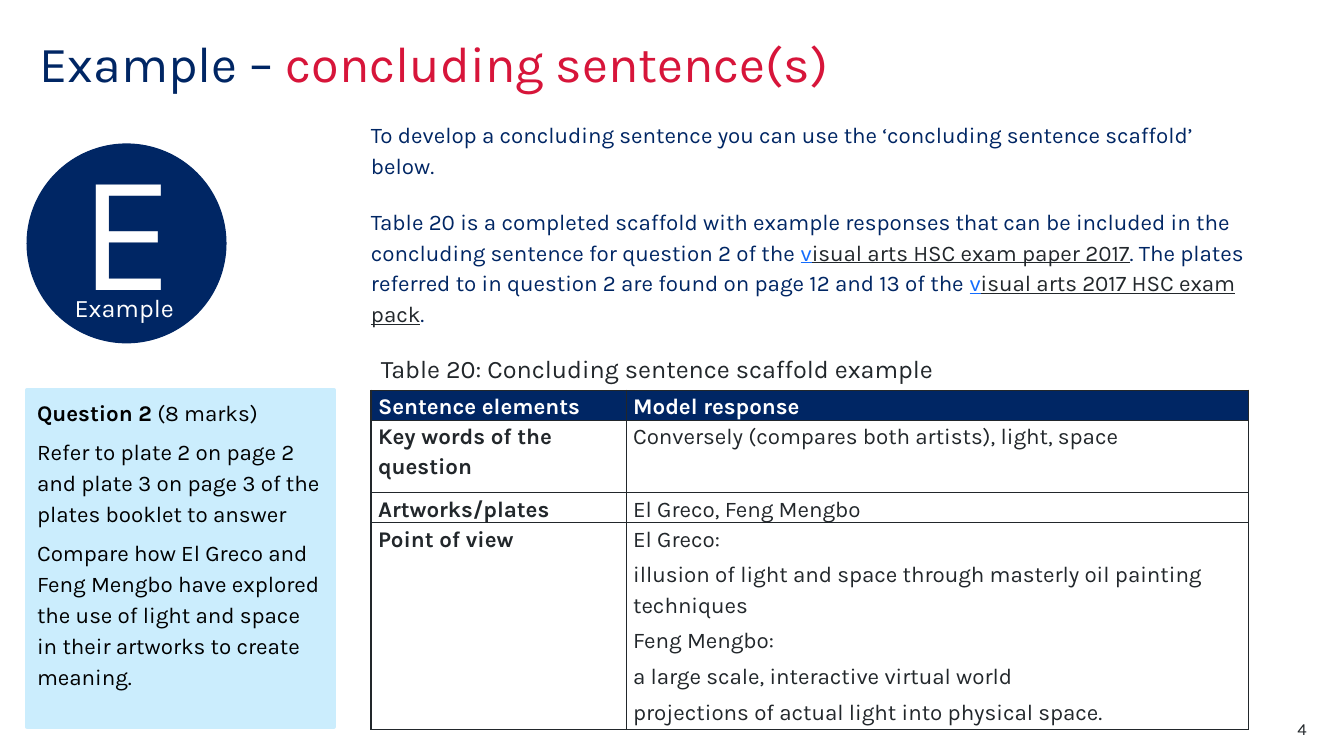
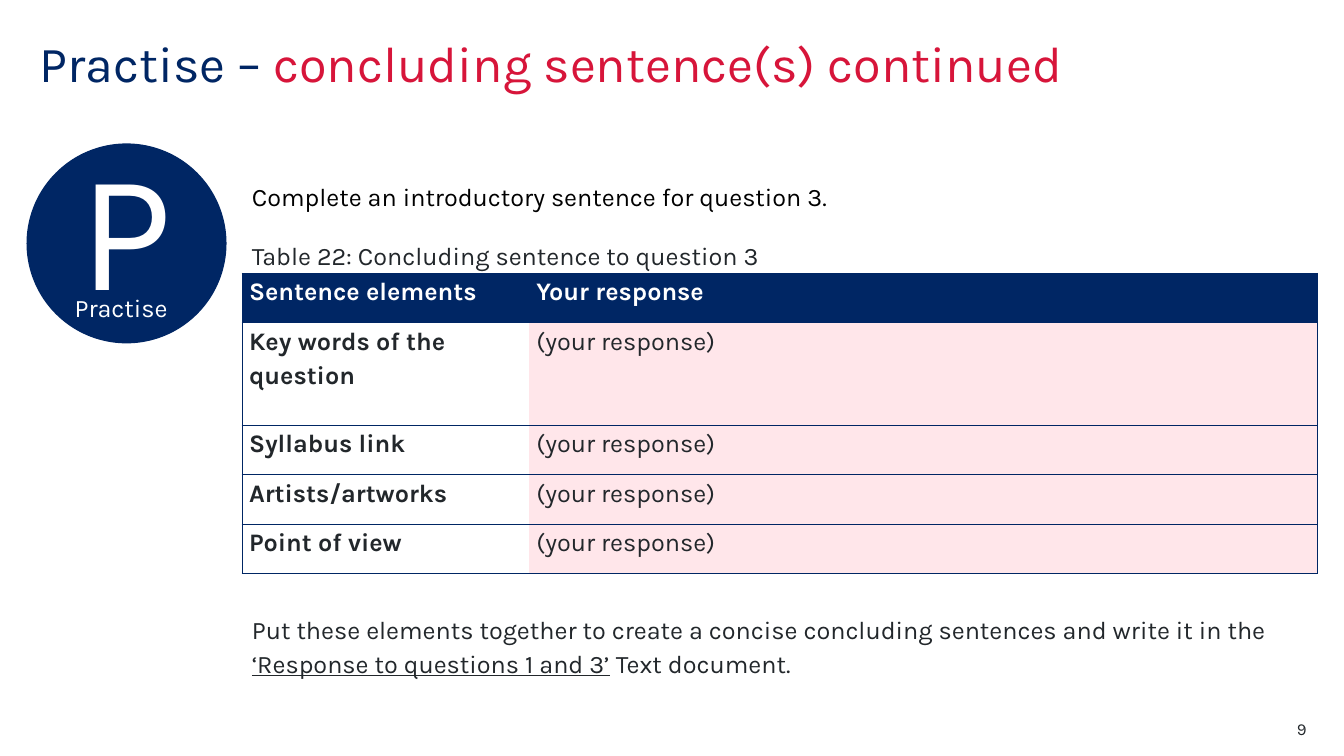
from lxml import etree
from pptx import Presentation
from pptx.dml.color import RGBColor
from pptx.enum.shapes import MSO_SHAPE
from pptx.enum.text import MSO_ANCHOR, MSO_AUTO_SIZE, PP_ALIGN
from pptx.oxml.ns import qn
from pptx.util import Inches, Pt

OVAL, RECT = MSO_SHAPE.OVAL, MSO_SHAPE.RECTANGLE
TOP, MIDDLE = MSO_ANCHOR.TOP, MSO_ANCHOR.MIDDLE
LEFT, CENTER, RIGHT = PP_ALIGN.LEFT, PP_ALIGN.CENTER, PP_ALIGN.RIGHT
NO_FIT = MSO_AUTO_SIZE.NONE

FONT = "Karla"
NAVY, RED, BLUE, SKY, PINK = "002664", "D7153A", "146CFD", "CBEDFD", "FFE6EA"
INK, BLACK, WHITE = "22272B", "000000", "FFFFFF"
TITLE_ONLY = 5


def rgb(value):
    return RGBColor.from_string(value)


def style_paragraph(p, size, color, bold=False, align=LEFT, line=None, before=0, after=0):
    p.alignment = align
    p.space_before, p.space_after = Pt(before), Pt(after)
    if line:
        p.line_spacing = line
    font = p.font
    font.name, font.size, font.bold = FONT, Pt(size), bold
    font.color.rgb = rgb(color)


def write(tf, paragraphs, size, color, before=0, **style):
    for i, runs in enumerate(paragraphs):
        p = tf.add_paragraph() if i else tf.paragraphs[0]
        style_paragraph(p, size, color, before=before if i else 0, **style)
        for run in [runs] if isinstance(runs, str) else runs:
            text, special = (run, {}) if isinstance(run, str) else run
            r = p.add_run()
            r.text = text
            if "color" in special:
                r.font.color.rgb = rgb(special["color"])
            if "bold" in special:
                r.font.bold = special["bold"]
            if "underline" in special:
                r.font.underline = special["underline"]


def set_frame(tf, inset_x=0.1, inset_y=0.05, anchor=TOP):
    tf.word_wrap = True
    tf.auto_size = NO_FIT
    tf.vertical_anchor = anchor
    tf.margin_left = tf.margin_right = Inches(inset_x)
    tf.margin_top = tf.margin_bottom = Inches(inset_y)


def add_text(s, box, paragraphs, size, color, inset_x=0.1, inset_y=0.05, **style):
    tf = s.shapes.add_textbox(*map(Inches, box)).text_frame
    set_frame(tf, inset_x, inset_y)
    write(tf, paragraphs, size, color, **style)


def add_panel(s, kind, box, color, line_width):
    sp = s.shapes.add_shape(kind, *map(Inches, box))
    sp.shadow.inherit = False
    sp.fill.solid()
    sp.fill.fore_color.rgb = rgb(color)
    sp.line.color.rgb = rgb(color)
    sp.line.width = Pt(line_width)
    return sp


def add_badge(s, x, y, size, word):
    sp = add_panel(s, OVAL, (x, y, size, size), NAVY, 1)
    tf = sp.text_frame
    set_frame(tf, anchor=MIDDLE)
    tf.margin_bottom = Inches(0.45)
    write(tf, [word[0]], 120, WHITE, align=CENTER)
    add_text(s, (x + 0.47, y + 1.47, 1.03, 0.48), [word], 18, WHITE, 0, 0)


def add_question(s, box, paragraphs):
    tf = add_panel(s, RECT, box, SKY, 3).text_frame
    set_frame(tf)
    write(tf, paragraphs, 16, BLACK, line=1.15, before=6)


def set_borders(cell, widths, color):
    tc_pr = cell._tc.get_or_add_tcPr()
    for side, width in zip("LRTB", widths):
        ln = etree.SubElement(tc_pr, qn(f"a:ln{side}"), w=str(Pt(width)))
        if width:
            fill = etree.SubElement(ln, qn("a:solidFill"))
            etree.SubElement(fill, qn("a:srgbClr"), val=color)
        else:
            etree.SubElement(ln, qn("a:noFill"))


def add_scaffold(s, x, y, widths, heights, rows, size, border, border_width,
                 inner_width, response_fill):
    box = (x, y, sum(widths), sum(heights))
    table = s.shapes.add_table(len(rows), len(widths), *map(Inches, box)).table
    table.first_row = table.horz_banding = False
    for column, width in zip(table.columns, widths):
        column.width = Inches(width)
    for i, (row, height) in enumerate(zip(rows, heights)):
        table.rows[i].height = Inches(height)
        for j, paragraphs in enumerate(row):
            cell = table.cell(i, j)
            cell.margin_left = cell.margin_right = Inches(0.07)
            cell.margin_top = cell.margin_bottom = 0
            left, right = (inner_width, border_width) if j else (border_width, inner_width)
            set_borders(cell, (left, right, border_width, border_width), border)
            cell.fill.solid()
            body_fill = response_fill if j else WHITE
            cell.fill.fore_color.rgb = rgb(body_fill if i else NAVY)
            if isinstance(paragraphs, str):
                paragraphs = [paragraphs]
            write(cell.text_frame, paragraphs, size, INK if i else WHITE,
                  bold=i == 0 or j == 0, line=1.15, before=4)


def add_base(prs, topic, number):
    s = prs.slides.add_slide(prs.slide_layouts[TITLE_ONLY])
    title = s.shapes.title
    title.left, title.top, title.width, title.height = map(Inches, (0.39, 0.39, 11.02, 1.1))
    set_frame(title.text_frame, 0, 0)
    word, rest = topic
    write(title.text_frame, [[f"{word} – ", (rest, {"color": RED})]], 36, NAVY, line=0.9)
    add_badge(s, 0.27, 1.43, 1.97, word)
    add_text(s, (12.17, 7.13, 0.79, 0.2), [str(number)], 12, INK, 0, 0, align=RIGHT)
    return s


def link(text):
    return [(text[0], {"color": BLUE, "underline": True}),
            (text[1:], {"color": INK, "underline": True})]


def build_example(prs):
    s = add_base(prs, ("Example", "concluding sentence(s)"), 4)
    x, width = 3.68, 8.7
    intro = [
        "To develop a concluding sentence you can use the ‘concluding sentence scaffold’ below.",
        ["Table 20 is a completed scaffold with example responses that can be included in the "
         "concluding sentence for question 2 of the ",
         *link("visual arts HSC exam paper 2017"),
         ". The plates referred to in question 2 are found on page 12 and 13 of the ",
         *link("visual arts 2017 HSC exam pack"), "."],
    ]
    add_text(s, (x, 1.16, width, 2.23), intro, 16, NAVY, 0, 0, line=1.15, before=18)
    add_question(s, (0.27, 3.87, 3.04, 3.34), [
        [("Question 2", {"bold": True}), " (8 marks)"],
        "Refer to plate 2 on page 2 and plate 3 on page 3 of the plates booklet to answer",
        "Compare how El Greco and Feng Mengbo have explored the use of light and space in "
        "their artworks to create meaning.",
    ])
    add_text(s, (x, 3.59, 8.14, 0.29), ["Table 20: Concluding sentence scaffold example"],
             18, INK, line=Pt(12))
    rows = [
        ("Sentence elements", "Model response"),
        ("Key words of the question", "Conversely (compares both artists), light, space"),
        ("Artworks/plates", "El Greco, Feng Mengbo"),
        ("Point of view", [
            "El Greco:",
            "illusion of light and space through masterly oil painting techniques",
            "Feng Mengbo:",
            "a large scale, interactive virtual world",
            "projections of actual light into physical space.",
        ]),
    ]
    add_scaffold(s, x, 3.87, (2.53, 6.17), (0.28, 0.72, 0.28, 2.05), rows, 16, INK, 1, 1, WHITE)


def build_practise(prs):
    s = add_base(prs, ("Practise", "concluding sentence(s) continued"), 9)
    x, width = 2.4, 10.67
    add_text(s, (x, 1.71, width, 0.42), ["Complete an introductory sentence for question 3."],
             18, BLACK, line=1.14)
    add_text(s, (x, 2.29, 8.14, 0.42), ["Table 22: Concluding sentence to question 3"],
             18, INK, line=1.14)
    elements = ("Key words of the question", "Syllabus link", "Artists/artworks", "Point of view")
    rows = [("Sentence elements", "Your response")]
    rows += [(element, "(your response)") for element in elements]
    add_scaffold(s, x, 2.71, (2.85, 7.82), (0.49, 1.02, 0.49, 0.49, 0.49), rows,
                 18, NAVY, 0.5, 0, PINK)
    add_text(s, (x, 6, width, 0.76), [[
        "Put these elements together to create a concise concluding sentences and write it in the ",
        ("‘Response to questions 1 and 3’", {"underline": True}),
        " Text document.",
    ]], 18, INK, line=1.14)


def main():
    prs = Presentation()
    prs.slide_width, prs.slide_height = Inches(13.33), Inches(7.5)
    build_example(prs)
    build_practise(prs)
    prs.save("out.pptx")


if __name__ == "__main__":
    main()
